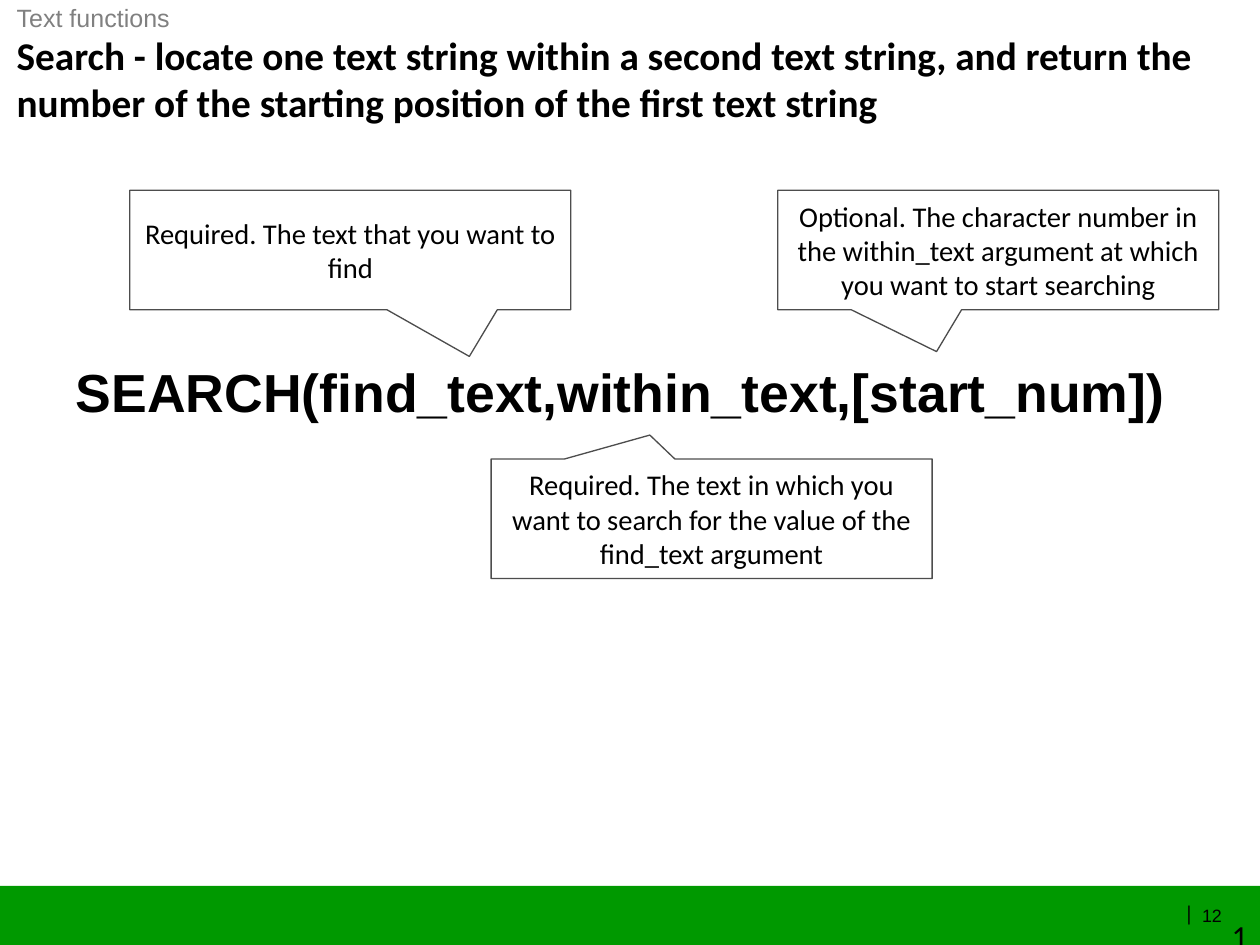
"""Build the slide explaining the arguments of the SEARCH text function."""
from dataclasses import dataclass

from pptx import Presentation
from pptx.dml.color import RGBColor
from pptx.enum.shapes import MSO_SHAPE as Shape
from pptx.enum.text import MSO_ANCHOR as Anchor, PP_ALIGN as Align
from pptx.slide import Slide
from pptx.text.text import TextFrame
from pptx.util import Inches, Pt

BLACK = RGBColor(0x00, 0x00, 0x00)
GREY = RGBColor(0x80, 0x80, 0x80)
OUTLINE = RGBColor(0x4D, 0x4D, 0x4D)
GREEN = RGBColor(0x00, 0x99, 0x00)

CALLOUT_WIDTH, CALLOUT_HEIGHT = 3.43, 0.93


@dataclass(frozen=True)
class Label:
    text: str
    left: float
    top: float
    width: float
    height: float
    size: float
    font: str = "Calibri"
    color: RGBColor = BLACK
    bold: bool = False
    wrap: bool = True
    inset: bool = False
    anchor: Anchor = Anchor.TOP
    align: Align = Align.LEFT
    line_spacing: float = 1.0


@dataclass(frozen=True)
class Callout:
    text: str
    left: float
    top: float
    tip_x: float
    tip_y: float


LABELS = (
    Label("|", 9.21, 7, 0.04, 0.2, 12, wrap=False, anchor=Anchor.MIDDLE, align=Align.RIGHT),
    Label("12", 9.35, 7.04, 0.23, 0.17, 10, "Arial", wrap=False),
    Label("12", 9.48, 7.08, 0.21, 0.17, 18, inset=True),
    Label("SEARCH(find_text,within_text,[start_num])", 0.59, 2.85, 8.5, 0.91, 30,
          "Arial", bold=True, line_spacing=0.9),
    Label("Search - locate one text string within a second text string, and return "
          "the number of the starting position of the first text string",
          0.13, 0.24, 9.43, 0.74, 22, bold=True),
    Label("Text functions", 0.13, 0.02, 4, 0.24, 14, "Arial", GREY),
)

CALLOUTS = (
    Callout("Required. The text that you want to find", 1.01, 1.48, 0.27, 0.89),
    Callout("Optional. The character number in the within_text argument at which "
            "you want to start searching", 6.05, 1.48, -0.14, 0.85),
    Callout("Required. The text in which you want to search for the value of the "
            "find_text argument", 3.82, 3.57, -0.14, -0.7),
)


def write_text(frame: TextFrame, text: str, size: float, font: str,
               color: RGBColor, bold: bool, align: Align) -> None:
    frame.text = text
    paragraph = frame.paragraphs[0]
    paragraph.alignment = align
    style = paragraph.runs[0].font
    style.name, style.size, style.bold = font, Pt(size), bold
    style.color.rgb = color


def add_footer_band(slide: Slide) -> None:
    band = slide.shapes.add_shape(
        Shape.RECTANGLE, 0, Inches(6.89), Inches(9.8), Inches(0.46))
    band.shadow.inherit = False
    band.fill.solid()
    band.fill.fore_color.rgb = GREEN
    band.line.fill.background()


def add_label(slide: Slide, label: Label) -> None:
    box = slide.shapes.add_textbox(Inches(label.left), Inches(label.top),
                                   Inches(label.width), Inches(label.height))
    frame = box.text_frame
    frame.word_wrap = label.wrap
    frame.vertical_anchor = label.anchor
    if not label.inset:
        frame.margin_left = frame.margin_right = 0
        frame.margin_top = frame.margin_bottom = 0
    write_text(frame, label.text, label.size, label.font, label.color,
               label.bold, label.align)
    frame.paragraphs[0].line_spacing = label.line_spacing


def add_callout(slide: Slide, callout: Callout) -> None:
    shape = slide.shapes.add_shape(
        Shape.RECTANGULAR_CALLOUT, Inches(callout.left), Inches(callout.top),
        Inches(CALLOUT_WIDTH), Inches(CALLOUT_HEIGHT))
    shape.adjustments[0] = callout.tip_x
    shape.adjustments[1] = callout.tip_y
    shape.shadow.inherit = False
    shape.fill.background()
    shape.line.color.rgb = OUTLINE
    shape.line.width = Pt(0.75)
    frame = shape.text_frame
    frame.word_wrap = True
    frame.vertical_anchor = Anchor.MIDDLE
    write_text(frame, callout.text, 16, "Calibri", BLACK, False, Align.CENTER)


def main() -> None:
    presentation = Presentation()
    presentation.slide_width = Inches(9.8)
    presentation.slide_height = Inches(7.35)
    slide = presentation.slides.add_slide(presentation.slide_layouts[6])
    add_footer_band(slide)
    for label in LABELS:
        add_label(slide, label)
    for callout in CALLOUTS:
        add_callout(slide, callout)
    presentation.save("out.pptx")


if __name__ == "__main__":
    main()
